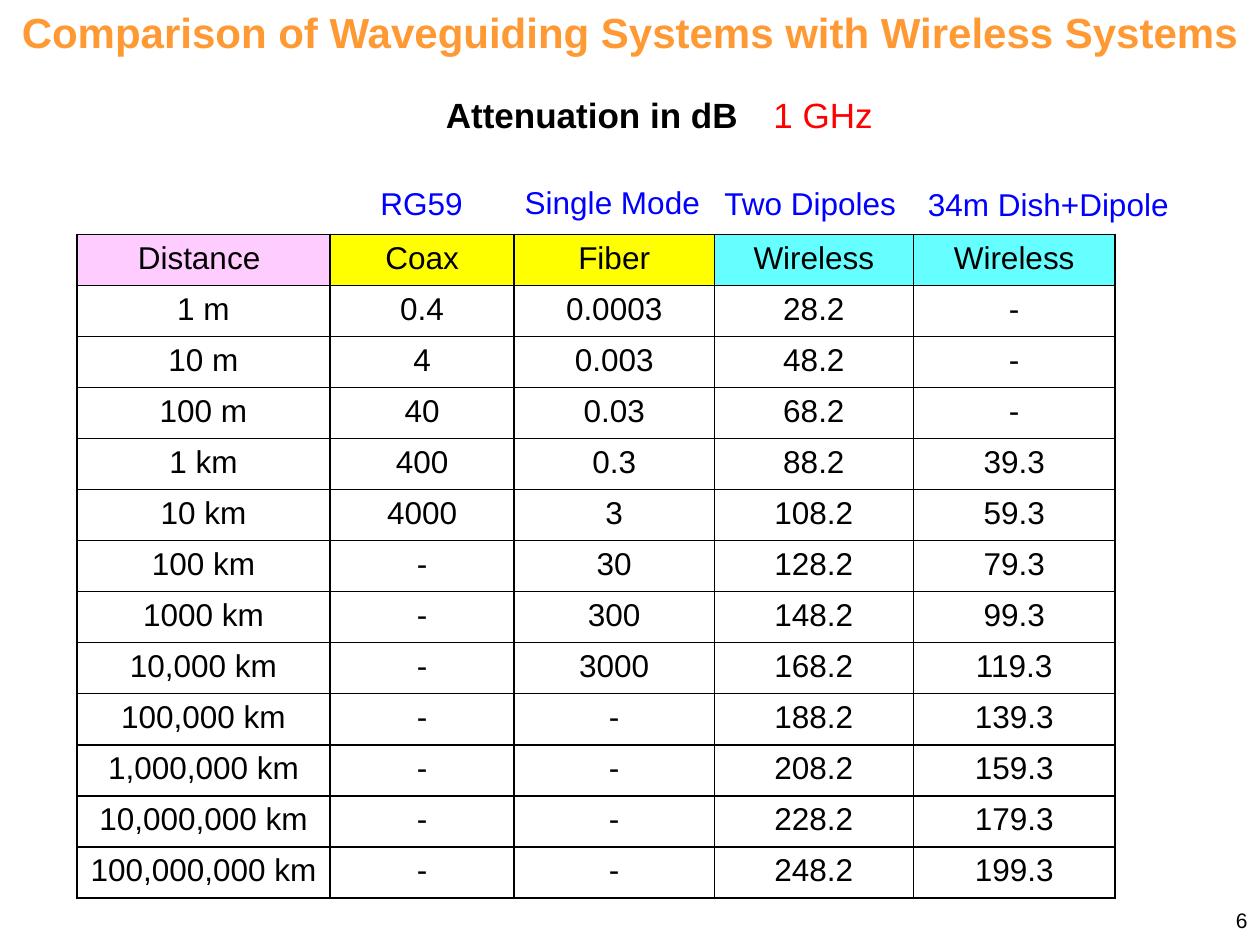
from lxml.etree import SubElement
from pptx import Presentation
from pptx.dml.color import RGBColor
from pptx.enum.text import MSO_ANCHOR, MSO_AUTO_SIZE, PP_ALIGN
from pptx.oxml.ns import qn
from pptx.util import Inches, Pt

FONT = "Arial"
BLACK, BLUE, RED, ORANGE = "000000", "0000FF", "FF0000", "FF9933"
PINK, YELLOW, CYAN = "FFCCFF", "FFFF00", "66FFFF"
COLUMNS = [2.01, 1.46, 1.59, 1.58, 1.6]
HEADER_FILLS = [PINK, YELLOW, YELLOW, CYAN, CYAN]
ROWS = [
    ["Distance ", "Coax", "Fiber", "Wireless", "Wireless"],
    ["1 m", "0.4", "0.0003", "28.2", "-"],
    ["10 m", "4", "0.003", "48.2", "-"],
    ["100 m", "40", "0.03", "68.2", "-"],
    ["1 km", "400", "0.3", "88.2", "39.3"],
    ["10 km", "4000", "3", "108.2", "59.3"],
    ["100 km", "-", "30", "128.2", "79.3"],
    ["1000 km", "-", "300", "148.2", "99.3"],
    ["10,000 km", "-", "3000", "168.2", "119.3"],
    ["100,000 km", "-", "-", "188.2", "139.3"],
    ["1,000,000 km", "-", "-", "208.2", "159.3"],
    ["10,000,000 km", "-", "-", "228.2", "179.3"],
    ["100,000,000 km", "-", "-", "248.2", "199.3"],
]
SYSTEMS = [
    ("RG59", (2.84, 1.41, 1.01, 0.4), True),
    ("Single Mode", (4.06, 1.4, 1.6, 0.4), False),
    ("Two Dipoles", (5.64, 1.41, 1.58, 0.4), False),
    ("34m Dish+Dipole", (7.23, 1.42, 2.18, 0.4), True),
]


def rgb(value):
    return RGBColor.from_string(value)


def write(tf, text, size, color, align, bold=False):
    tf.text = text
    p = tf.paragraphs[0]
    p.alignment = align
    font = p.runs[0].font
    font.name, font.size, font.bold = FONT, Pt(size), bold
    font.color.rgb = rgb(color)


def add_text(s, box, text, size, color, align=PP_ALIGN.CENTER, bold=False,
             wrap=True, grow=True, anchor=MSO_ANCHOR.TOP):
    tf = s.shapes.add_textbox(*map(Inches, box)).text_frame
    write(tf, text, size, color, align, bold)
    tf.word_wrap = wrap
    tf.auto_size = MSO_AUTO_SIZE.SHAPE_TO_FIT_TEXT if grow else MSO_AUTO_SIZE.NONE
    tf.vertical_anchor = anchor


def add_borders(cell, color, width):
    tc_pr = cell._tc.get_or_add_tcPr()
    for i, side in enumerate(("lnL", "lnR", "lnT", "lnB")):
        ln = SubElement(tc_pr, qn(f"a:{side}"), w=str(Pt(width)))
        fill = SubElement(ln, qn("a:solidFill"))
        SubElement(fill, qn("a:srgbClr"), val=color)
        tc_pr.insert(i, ln)


def add_headings(s, box):
    left, top, width, height = box
    add_text(s, (left, top, width, 0.5),
             "Comparison of Waveguiding Systems with Wireless Systems",
             24, ORANGE, bold=True)
    line_top = top + height - 0.44
    add_text(s, (left + 3.44, line_top, 2.54, 0.44), "Attenuation in dB", 20, BLACK,
             PP_ALIGN.LEFT, bold=True, wrap=False)
    add_text(s, (left + 6.04, line_top, 1, 0.44), "1 GHz", 20, RED,
             PP_ALIGN.LEFT, wrap=False)


def add_system_labels(s):
    for text, box, wrap in SYSTEMS:
        add_text(s, box, text, 18, BLUE, wrap=wrap)


def add_attenuation_table(s, box):
    table = s.shapes.add_table(len(ROWS), len(COLUMNS), *map(Inches, box)).table
    table.first_row = table.horz_banding = False
    for column, width in zip(table.columns, COLUMNS):
        column.width = Inches(width)
    for r, values in enumerate(ROWS):
        for c, value in enumerate(values):
            cell = table.cell(r, c)
            write(cell.text_frame, value, 18, BLACK, PP_ALIGN.CENTER)
            if r == 0:
                cell.fill.solid()
                cell.fill.fore_color.rgb = rgb(HEADER_FILLS[c])
            else:
                cell.fill.background()
            add_borders(cell, BLACK, 1)


def add_page_number(s, box):
    add_text(s, box, "6", 12, BLACK, PP_ALIGN.RIGHT, grow=False,
             anchor=MSO_ANCHOR.MIDDLE)


def main():
    prs = Presentation()
    prs.slide_width, prs.slide_height = Inches(10), Inches(7.5)
    s = prs.slides.add_slide(prs.slide_layouts[6])
    add_headings(s, (0, 0, 10, 1.13))
    add_page_number(s, (7.67, 7.1, 2.33, 0.4))
    add_attenuation_table(s, (0.61, 1.86, sum(COLUMNS), 5.27))
    add_system_labels(s)
    prs.save("out.pptx")


if __name__ == "__main__":
    main()
